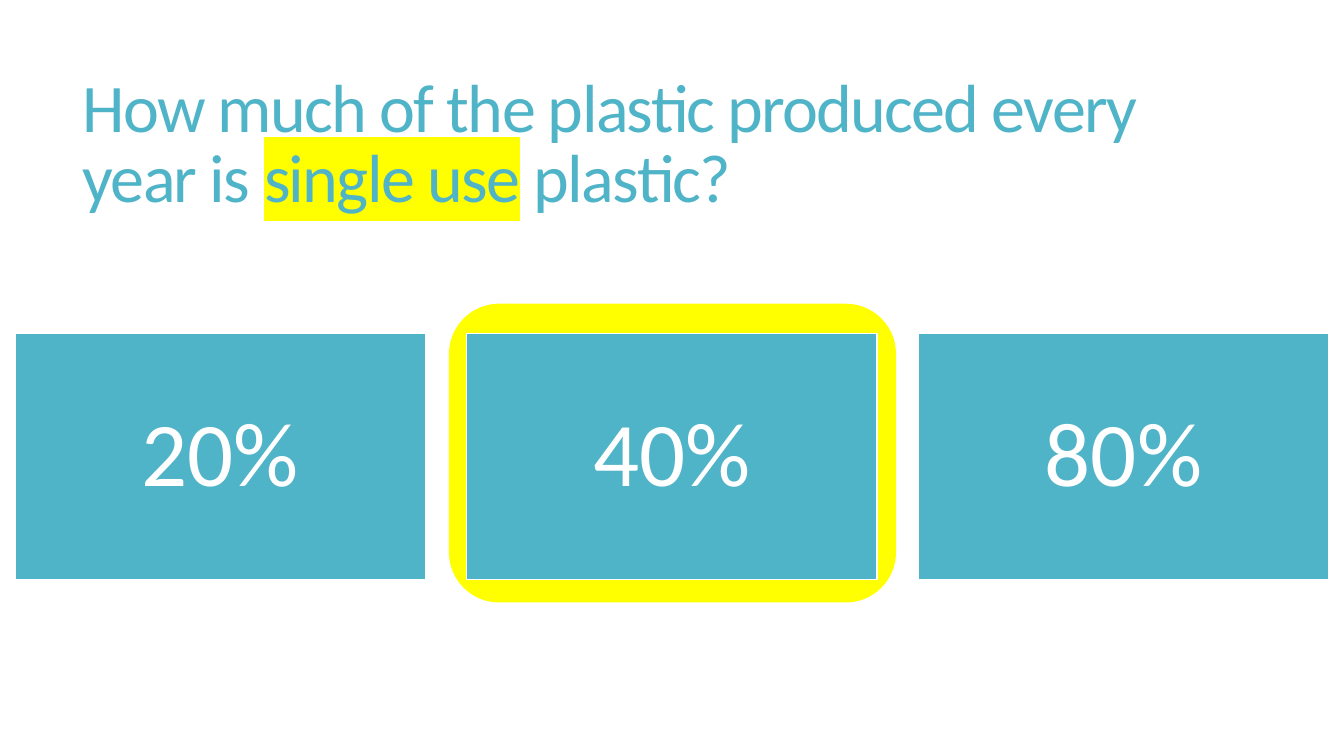
from dataclasses import dataclass

from lxml.etree import SubElement
from pptx import Presentation
from pptx.dml.color import RGBColor
from pptx.enum.shapes import MSO_SHAPE as Shape
from pptx.enum.text import MSO_ANCHOR as Anchor, PP_ALIGN as Align
from pptx.oxml.ns import qn
from pptx.util import Inches, Pt


@dataclass(frozen=True)
class Theme:
    teal: RGBColor = RGBColor.from_string("50B4C8")
    yellow: RGBColor = RGBColor.from_string("FFFF00")
    white: RGBColor = RGBColor.from_string("FFFFFF")
    font: str = "Calibri"
    title_size: float = 48.6
    answer_size: float = 65
    title_spacing: float = -1.2


theme = Theme()


def add_box(slide, kind, left, top, width, height, fill, line):
    shape = slide.shapes.add_shape(
        kind, Inches(left), Inches(top), Inches(width), Inches(height)
    )
    shape.shadow.inherit = False
    shape.fill.solid()
    shape.fill.fore_color.rgb = fill
    shape.line.color.rgb = line
    shape.line.width = Pt(1)
    return shape


def add_run(paragraph, text, size, color):
    run = paragraph.add_run()
    run.text = text
    run.font.size = Pt(size)
    run.font.color.rgb = color
    run.font.name = theme.font
    return run


presentation = Presentation()
presentation.slide_width = Inches(13.33)
presentation.slide_height = Inches(7.5)
slide = presentation.slides.add_slide(presentation.slide_layouts[6])

add_box(slide, Shape.ROUNDED_RECTANGLE, 4.46, 3.02, 4.42, 2.95, theme.yellow, theme.yellow)

title = slide.shapes.add_textbox(Inches(0.72), Inches(0.55), Inches(11.78), Inches(1.81))
title.text_frame.word_wrap = True
title.text_frame.vertical_anchor = Anchor.MIDDLE
question = title.text_frame.paragraphs[0]
question.line_spacing = 0.85
for text, highlighted in (
    ("How much of the plastic produced every year is ", False),
    ("single use", True),
    (" plastic?", False),
):
    run = add_run(question, text, theme.title_size, theme.teal)
    properties = run.font._element if hasattr(run.font, "_element") else run._r.get_or_add_rPr()
    properties.set("spc", str(round(theme.title_spacing * 100)))
    if highlighted:
        highlight = SubElement(properties, qn("a:highlight"))
        SubElement(highlight, qn("a:srgbClr"), val=str(theme.yellow))
        properties.find(qn("a:solidFill")).addnext(highlight)

for index, answer in enumerate(("20%", "40%", "80%")):
    card = add_box(
        slide, Shape.RECTANGLE, 0.15 + 4.48 * index, 3.31, 4.07, 2.44, theme.teal, theme.white
    )
    frame = card.text_frame
    frame.word_wrap = True
    frame.vertical_anchor = Anchor.MIDDLE
    frame.margin_left = frame.margin_right = Inches(0.27)
    frame.margin_top = frame.margin_bottom = Inches(0.27)
    paragraph = frame.paragraphs[0]
    paragraph.alignment = Align.CENTER
    paragraph.line_spacing = 0.9
    add_run(paragraph, answer, theme.answer_size, theme.white)

presentation.save("out.pptx")
